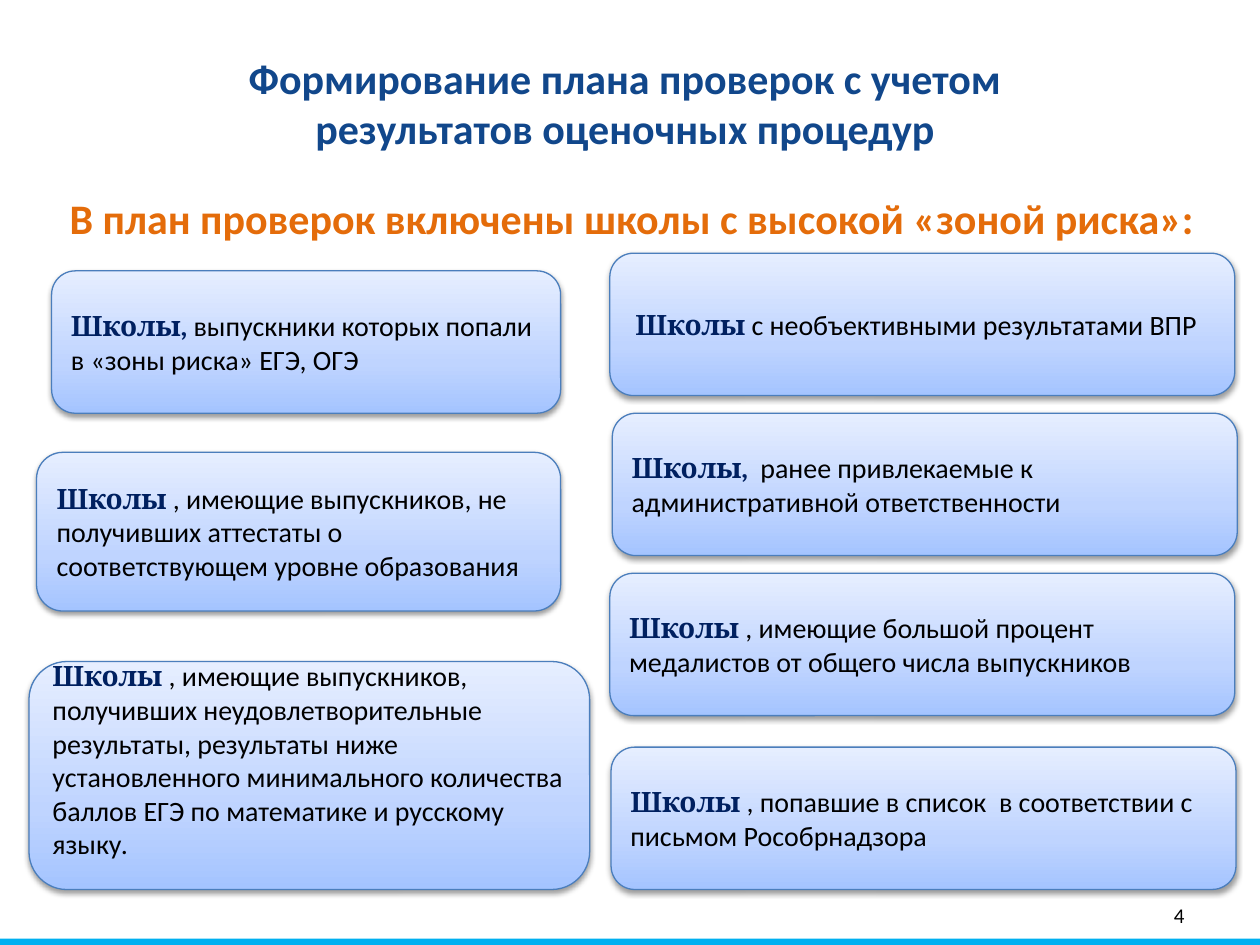
from lxml import etree
from pptx import Presentation
from pptx.dml.color import RGBColor
from pptx.enum.shapes import MSO_SHAPE
from pptx.enum.text import MSO_ANCHOR, PP_ALIGN
from pptx.oxml import parse_xml
from pptx.oxml.ns import nsdecls, qn
from pptx.util import Inches, Pt

RECT, ROUNDED = MSO_SHAPE.RECTANGLE, MSO_SHAPE.ROUNDED_RECTANGLE
MIDDLE = MSO_ANCHOR.MIDDLE
LEFT, CENTER, RIGHT = PP_ALIGN.LEFT, PP_ALIGN.CENTER, PP_ALIGN.RIGHT

STOPS = [(0, "A4C4FF"), (35, "BFD4FF"), (100, "E6EEFF")]
GRADIENT = f"<a:gsLst {nsdecls('a')}>" + "".join(
    f'<a:gs pos="{share * 1000}"><a:srgbClr val="{color}"/></a:gs>'
    for share, color in STOPS) + "</a:gsLst>"
SHADOW = (f'<a:outerShdw {nsdecls("a")} blurRad="{Pt(3.1)}" dist="{Pt(1.6)}" '
          'dir="5400000" rotWithShape="0"><a:srgbClr val="000000">'
          '<a:alpha val="38000"/></a:srgbClr></a:outerShdw>')


def rgb(color):
    return RGBColor.from_string(color)


def write(box, spans, size, align, inset_x=0.1, inset_y=0.05):
    """Fill a box with one paragraph of (text, font, colour, bold) spans."""
    frame = box.text_frame
    frame.word_wrap = True
    frame.vertical_anchor = MIDDLE
    frame.margin_left = frame.margin_right = Inches(inset_x)
    frame.margin_top = frame.margin_bottom = Inches(inset_y)
    para = frame.paragraphs[0]
    para.alignment = align
    para.font.size = Pt(size)
    for text, font, color, bold in spans:
        span = para.add_run()
        span.text = text
        span.font.name, span.font.bold = font, bold
        span.font.color.rgb = rgb(color)


deck = Presentation()
deck.slide_width, deck.slide_height = Inches(10), Inches(7.5)
page = deck.slides.add_slide(deck.slide_layouts[5])
shapes = page.shapes

# Footer strip and page number
strip = shapes.add_shape(RECT, 0, Inches(7.45), deck.slide_width, Inches(0.05))
strip.shadow.inherit = False
strip.fill.solid()
strip.fill.fore_color.rgb = rgb("00B0F0")
strip.line.fill.background()
number = shapes.add_textbox(Inches(7.17), Inches(7.06), Inches(2.33), Inches(0.4))
write(number, [("4", "Calibri", "000000", False)], 12, RIGHT)

# Title and subtitle
title = shapes.title
title.left, title.top = Inches(1.77), Inches(0.29)
title.width, title.height = Inches(6.38), Inches(1.05)
write(title, [("Формирование плана проверок с учетом результатов оценочных процедур",
               "Calibri", "11478B", True)], 24, CENTER, 0.07, 0.04)
subtitle = shapes.add_textbox(Inches(0.03), Inches(1.39), Inches(9.97), Inches(0.67))
write(subtitle, [("В план проверок включены школы с высокой «зоной риска»:",
                  "Calibri", "E46C0A", True)], 24, CENTER, 0.07, 0.04)

# Cards: left, top, width, height, indent, bold lead, rest of the text
WIDE, TALL = 4.96, 1.13
CARDS = [
    (0.41, 2.15, 4.04, TALL, "", "Школы, ",
     "выпускники которых попали в «зоны риска» ЕГЭ, ОГЭ"),
    (0.29, 3.59, 4.16, 1.26, "", "Школы ",
     ", имеющие выпускников, не получивших аттестаты о соответствующем уровне образования"),
    (0.23, 5.25, 4.45, 1.81, "", "Школы ",
     ", имеющие выпускников, получивших неудовлетворительные результаты, результаты ниже "
     "установленного минимального количества баллов ЕГЭ по математике и русскому языку."),
    (4.84, 2.01, WIDE, TALL, " ", "Школы ", "с необъективными результатами ВПР"),
    (4.86, 3.28, WIDE, TALL, "", "Школы,  ",
     "ранее привлекаемые к административной ответственности"),
    (4.84, 4.55, WIDE, TALL, "", "Школы ",
     ", имеющие большой процент медалистов от общего числа выпускников"),
    (4.85, 5.93, WIDE, TALL, "", "Школы ",
     ", попавшие в список  в соответствии с письмом Рособрнадзора"),
]
for left, top, width, height, indent, lead, rest in CARDS:
    card = shapes.add_shape(ROUNDED, *map(Inches, (left, top, width, height)))
    card.fill.gradient()
    card.fill.gradient_angle = 90
    stops = card.element.spPr.find(".//" + qn("a:gsLst"))
    stops.getparent().replace(stops, etree.fromstring(GRADIENT))
    card.line.color.rgb = rgb("4B7EBC")
    card.line.width = Pt(0.75)
    card.shadow.inherit = False
    card.element.spPr.find(qn("a:effectLst")).append(parse_xml(SHADOW))
    spans = [(lead, "Cambria", "002060", True), (rest, "Calibri", "000000", False)]
    if indent:
        spans.insert(0, (indent, "Calibri", "000000", False))
    write(card, spans, 16, LEFT)
    if height > 1.5:  # the longest text sits a little above the middle
        card.text_frame.margin_bottom = Inches(0.3)

deck.save("out.pptx")
